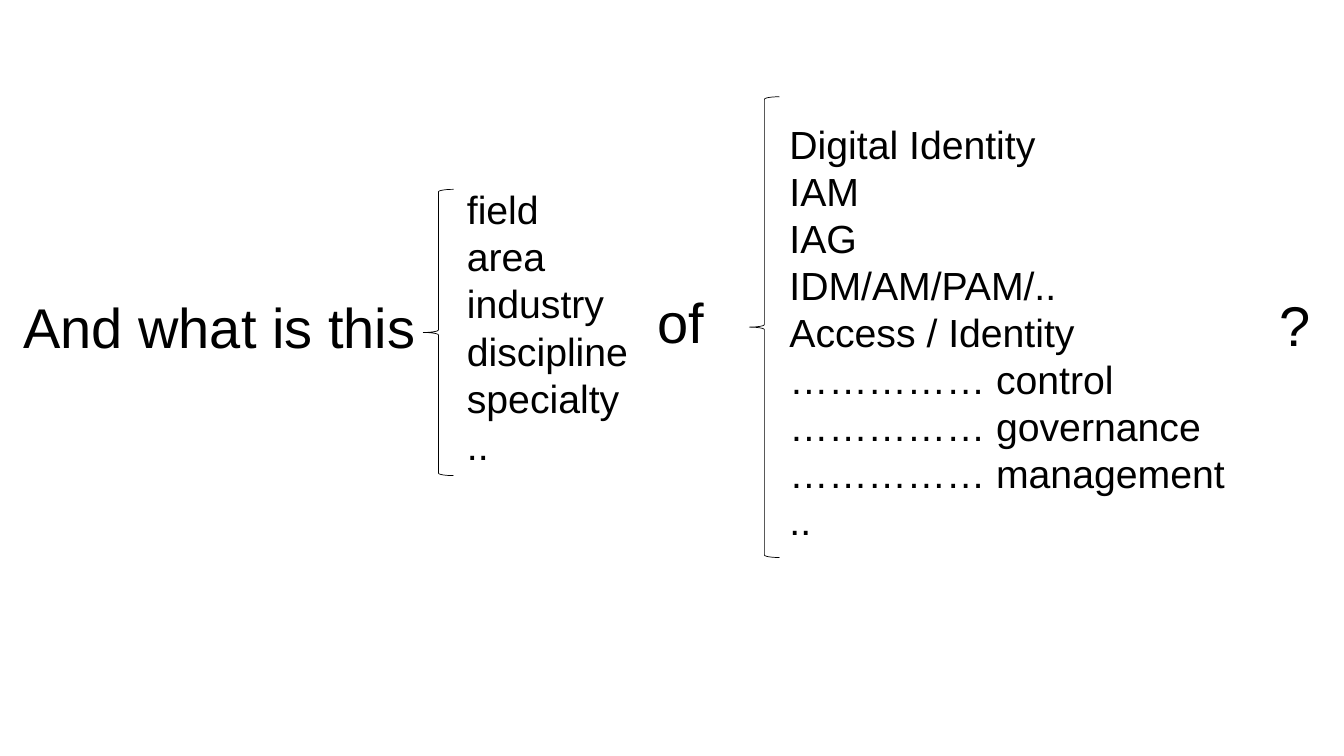
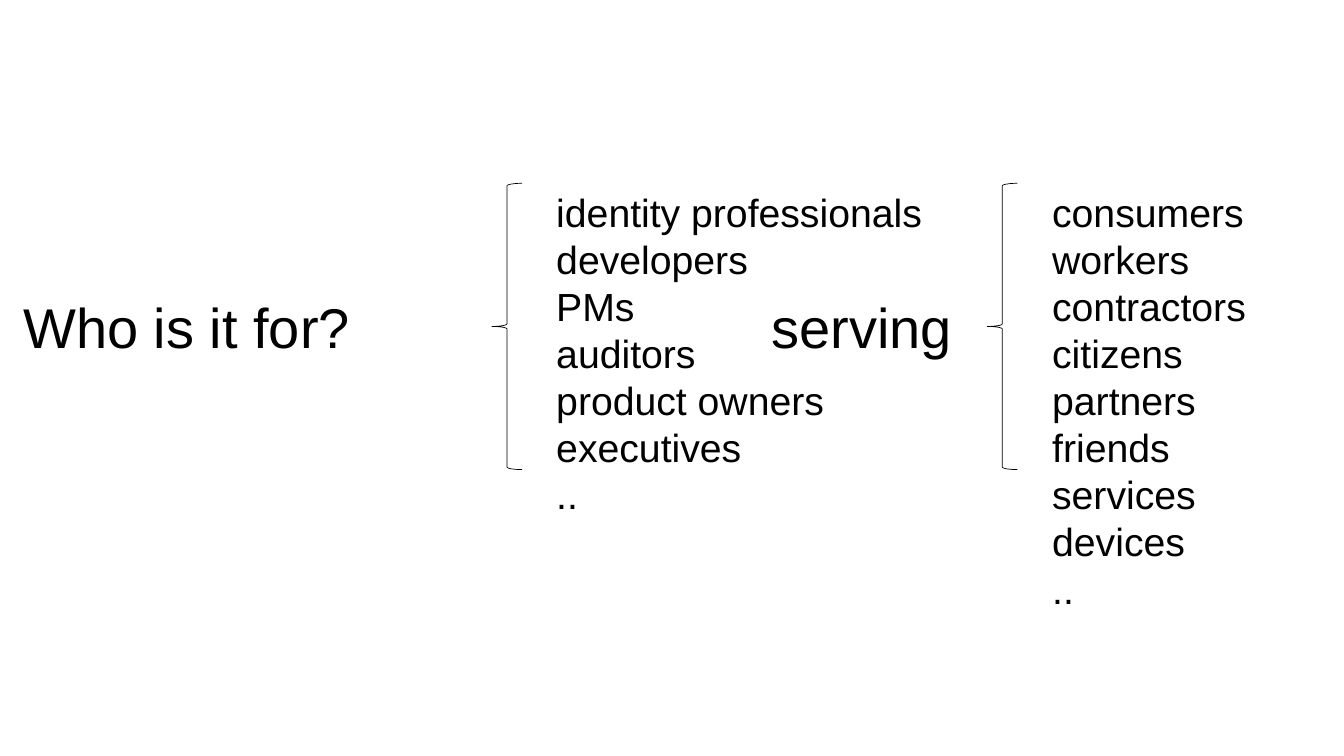
from dataclasses import dataclass

from pptx import Presentation
from pptx.dml.color import RGBColor
from pptx.enum.shapes import MSO_SHAPE as Shape
from pptx.enum.text import MSO_AUTO_SIZE as AutoSize, PP_ALIGN as Align
from pptx.slide import Slide
from pptx.util import Inches, Pt

SLIDE_WIDTH = Inches(13.33)
SLIDE_HEIGHT = Inches(7.5)
COLUMNS = ROWS = 100
BRACE_COLUMNS = 2.25
LINE_SPACING = 1.21
INSETS = Inches(0.1)
FONT = "Arial"
INK = "000000"
PAPER = "FFFFFF"
PHRASE_SIZE = 40
OPTION_SIZE = 28


@dataclass(frozen=True)
class Text:
    column: float
    row: float
    width: float
    lines: tuple[str, ...]
    size: int = OPTION_SIZE


@dataclass(frozen=True)
class Brace:
    column: float
    row: float
    height: float = 37.87


@dataclass(frozen=True)
class Question:
    texts: tuple[Text, ...]
    braces: tuple[Brace, ...]


def phrase(column: float, row: float, width: float, wording: str) -> Text:
    return Text(column, row, width, (wording,), PHRASE_SIZE)


QUESTIONS = (
    Question(
        texts=(
            phrase(1, 38, 31, "And what is this"),
            Text(34, 23.9, 14.8, (
                "field", "area", "industry", "discipline", "specialty", "..",
            )),
            phrase(48.15, 37.35, 5.5, "of"),
            Text(58, 15.2, 35.55, (
                "Digital Identity", "IAM", "IAG", "IDM/AM/PAM/..",
                "Access / Identity", "…………… control", "…………… governance",
                "…………… management", "..",
            )),
            phrase(94.45, 37.75, 3.45, "?"),
        ),
        braces=(Brace(31.5, 25.05), Brace(55.75, 12.8, 60.95)),
    ),
    Question(
        texts=(
            phrase(1, 38, 26.1, "Who is it for?"),
            Text(40.65, 24.25, 29.55, (
                "identity professionals", "developers", "PMs", "auditors",
                "product owners", "executives", "..",
            )),
            phrase(56.65, 38, 15.1, "serving"),
            Text(77.55, 24.25, 16.15, (
                "consumers", "workers", "contractors", "citizens", "partners",
                "friends", "services", "devices", "..",
            )),
        ),
        braces=(Brace(36.6, 24.25), Brace(73.45, 24.25)),
    ),
)


def color(value: str) -> RGBColor:
    return RGBColor.from_string(value)


def across(columns: float) -> int:
    return round(SLIDE_WIDTH * columns / COLUMNS)


def down(rows: float) -> int:
    return round(SLIDE_HEIGHT * rows / ROWS)


def add_text(page: Slide, text: Text) -> None:
    height = Pt(len(text.lines) * text.size * LINE_SPACING) + INSETS
    box = page.shapes.add_textbox(
        across(text.column), down(text.row), across(text.width), height
    )
    frame = box.text_frame
    frame.text = "\n".join(text.lines)
    frame.word_wrap = False
    frame.auto_size = AutoSize.SHAPE_TO_FIT_TEXT
    for para in frame.paragraphs:
        para.alignment = Align.LEFT
        for span in para.runs:
            span.font.name = FONT
            span.font.size = Pt(text.size)
            span.font.color.rgb = color(INK)


def add_brace(page: Slide, brace: Brace) -> None:
    shape = page.shapes.add_shape(
        Shape.LEFT_BRACE,
        across(brace.column), down(brace.row),
        across(BRACE_COLUMNS), down(brace.height),
    )
    shape.shadow.inherit = False
    shape.fill.background()
    shape.line.color.rgb = color(INK)
    shape.line.width = Pt(0.5)


def main() -> None:
    deck = Presentation()
    deck.slide_width = SLIDE_WIDTH
    deck.slide_height = SLIDE_HEIGHT
    background = deck.slide_master.background.fill
    background.solid()
    background.fore_color.rgb = color(PAPER)
    blank = deck.slide_layouts[6]
    for question in QUESTIONS:
        page = deck.slides.add_slide(blank)
        for text in question.texts:
            add_text(page, text)
        for brace in question.braces:
            add_brace(page, brace)
    deck.save("out.pptx")


if __name__ == "__main__":
    main()
